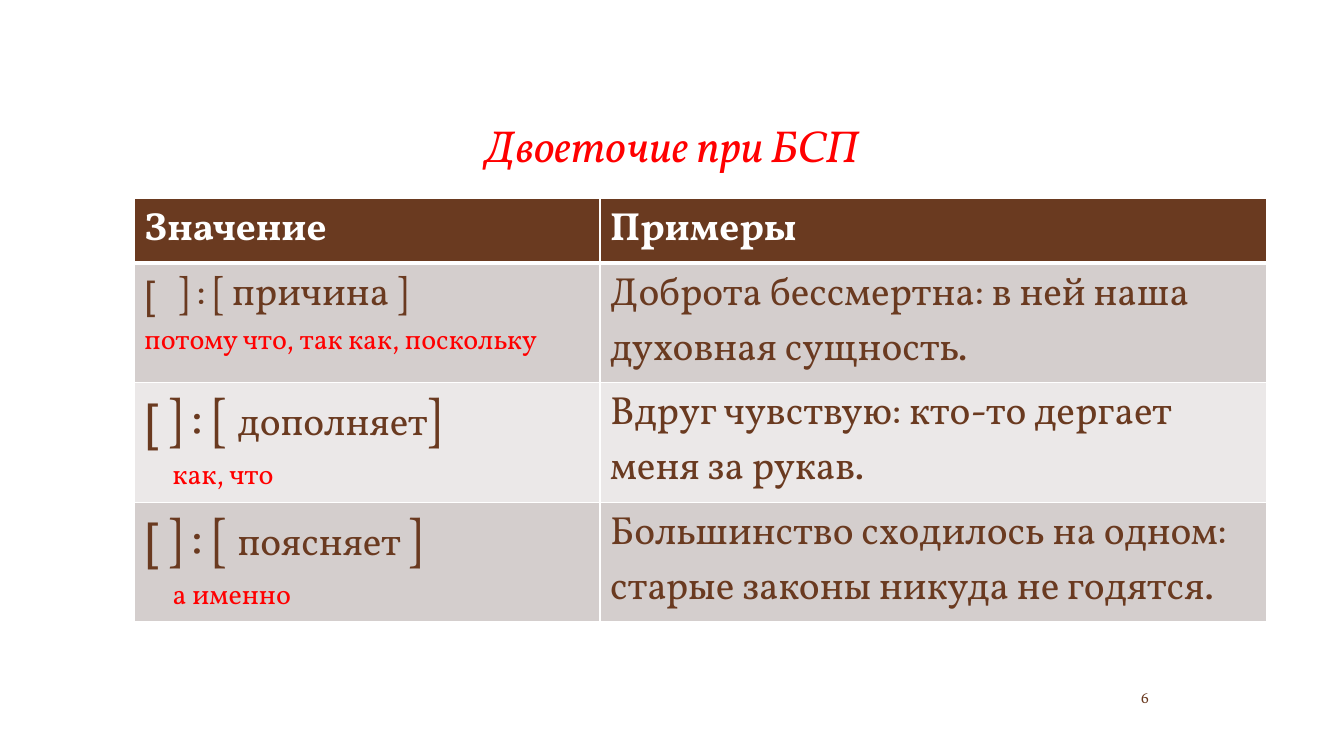
from dataclasses import dataclass

from lxml import etree
from pptx import Presentation
from pptx.dml.color import RGBColor
from pptx.enum.text import MSO_ANCHOR, PP_ALIGN
from pptx.oxml.ns import qn
from pptx.util import Emu, Inches, Pt

CENTER = PP_ALIGN.CENTER
BOTTOM = MSO_ANCHOR.BOTTOM
MIDDLE = MSO_ANCHOR.MIDDLE

SLIDE_WIDTH, SLIDE_HEIGHT = Inches(13.33), Inches(7.5)
FONT = "Vollkorn"
BROWN, RED, WHITE = "6A3A20", "FF0000", "FFFFFF"
BAND_COLORS = ("D4CECD", "EBE8E8")
COLUMN_SHARES = (34.65, 49.6)
HEADER_SHARE, ROW_SHARE = 8.55, 15.75
BRACKET = "["


@dataclass
class Piece:
    text: str
    size: int = 28
    color: str = BROWN
    bold: bool = False
    italic: bool = False


@dataclass
class Line:
    pieces: list[Piece]
    indent: float = 0
    bullet: str = ""


@dataclass
class Rule:
    scheme: Line
    conjunctions: Line
    example: str


def across(percent: float) -> Emu:
    return Emu(round(SLIDE_WIDTH * percent / 100))


def down(percent: float) -> Emu:
    return Emu(round(SLIDE_HEIGHT * percent / 100))


def color_of(value: str) -> RGBColor:
    return RGBColor.from_string(value)


def place(shape, left: float, top: float, width: float, height: float) -> None:
    shape.left, shape.top = across(left), down(top)
    shape.width, shape.height = across(width), down(height)


def indent_paragraph(paragraph, line: Line) -> None:
    """Set the left indent and, for a bulleted line, hang the bullet in it."""
    properties = paragraph._p.get_or_add_pPr()
    margin = across(line.indent)
    properties.set("marL", str(margin))
    properties.set("indent", str(-margin if line.bullet else 0))
    if line.bullet:
        etree.SubElement(properties, qn("a:buFont"), typeface="Arial")
        etree.SubElement(properties, qn("a:buChar"), char=line.bullet)


def write(text_frame, lines: list[Line]) -> None:
    text_frame.text = "\n".join("" for _ in lines)
    for paragraph, line in zip(text_frame.paragraphs, lines):
        if line.indent:
            indent_paragraph(paragraph, line)
        for piece in line.pieces:
            run = paragraph.add_run()
            run.text = piece.text
            font = run.font
            font.name, font.size = FONT, Pt(piece.size)
            font.bold, font.italic = piece.bold, piece.italic
            font.color.rgb = color_of(piece.color)


def add_borders(cell, bottom_width: float) -> None:
    properties = cell._tc.get_or_add_tcPr()
    widths = {"a:lnL": 1, "a:lnR": 1, "a:lnT": 1, "a:lnB": bottom_width}
    for position, (tag, width) in enumerate(widths.items()):
        border = etree.Element(qn(tag), w=str(Pt(width)))
        fill = etree.SubElement(border, qn("a:solidFill"))
        etree.SubElement(fill, qn("a:srgbClr"), val=WHITE)
        properties.insert(position, border)


def fill_cell(cell, lines: list[Line], fill: str, bottom_width: float = 1) -> None:
    write(cell.text_frame, lines)
    cell.fill.solid()
    cell.fill.fore_color.rgb = color_of(fill)
    add_borders(cell, bottom_width)


def large_scheme(word: str, closing: str) -> Line:
    pieces = [Piece("] : [ ", 36), Piece(word), Piece(closing, 36)]
    return Line(pieces, 1.75, BRACKET)


def conjunction_line(text: str, indent: float = 0) -> Line:
    return Line([Piece(text, 20, RED)], indent)


HEADINGS = ("Значение", "Примеры")
RULES = [
    Rule(Line([Piece("] : [ причина ]")], 2.5, BRACKET),
         conjunction_line("потому что, так как, поскольку"),
         "Доброта бессмертна: в ней наша духовная сущность."),
    Rule(large_scheme("дополняет", "]"),
         conjunction_line("как, что", 2.1),
         "Вдруг чувствую: кто-то дергает меня за рукав."),
    Rule(large_scheme("поясняет ", "]"),
         conjunction_line("а именно", 2.1),
         "Большинство сходилось на одном: старые законы никуда не годятся."),
]


def add_title(slide) -> None:
    title = slide.shapes.title
    place(title, 10, 6.27, 80, 17.07)
    title.text_frame.vertical_anchor = BOTTOM
    write(title.text_frame, [Line([Piece("Двоеточие при БСП", 32, RED, italic=True)])])
    title.text_frame.paragraphs[0].alignment = CENTER


def add_rules_table(slide) -> None:
    height = HEADER_SHARE + ROW_SHARE * len(RULES)
    table = slide.shapes.add_table(
        len(RULES) + 1, len(HEADINGS), across(10), down(26.27),
        across(sum(COLUMN_SHARES)), down(height)).table
    for column, share in zip(table.columns, COLUMN_SHARES):
        column.width = across(share)
    for index, row in enumerate(table.rows):
        row.height = down(ROW_SHARE if index else HEADER_SHARE)
    for index, heading in enumerate(HEADINGS):
        line = Line([Piece(heading, color=WHITE, bold=True)])
        fill_cell(table.cell(0, index), [line], BROWN, 3)
    for index, rule in enumerate(RULES):
        band = BAND_COLORS[index % 2]
        fill_cell(table.cell(index + 1, 0), [rule.scheme, rule.conjunctions], band)
        fill_cell(table.cell(index + 1, 1), [Line([Piece(rule.example)])], band)


def add_slide_number(slide) -> None:
    box = slide.shapes.add_textbox(across(84.17), down(90), across(5.85), down(4.4))
    box.text_frame.word_wrap = True
    box.text_frame.vertical_anchor = MIDDLE
    write(box.text_frame, [Line([Piece("6", 11)])])


def main() -> None:
    presentation = Presentation()
    presentation.slide_width, presentation.slide_height = SLIDE_WIDTH, SLIDE_HEIGHT
    slide = presentation.slides.add_slide(presentation.slide_layouts[5])
    add_title(slide)
    add_rules_table(slide)
    add_slide_number(slide)
    presentation.save("out.pptx")


if __name__ == "__main__":
    main()
